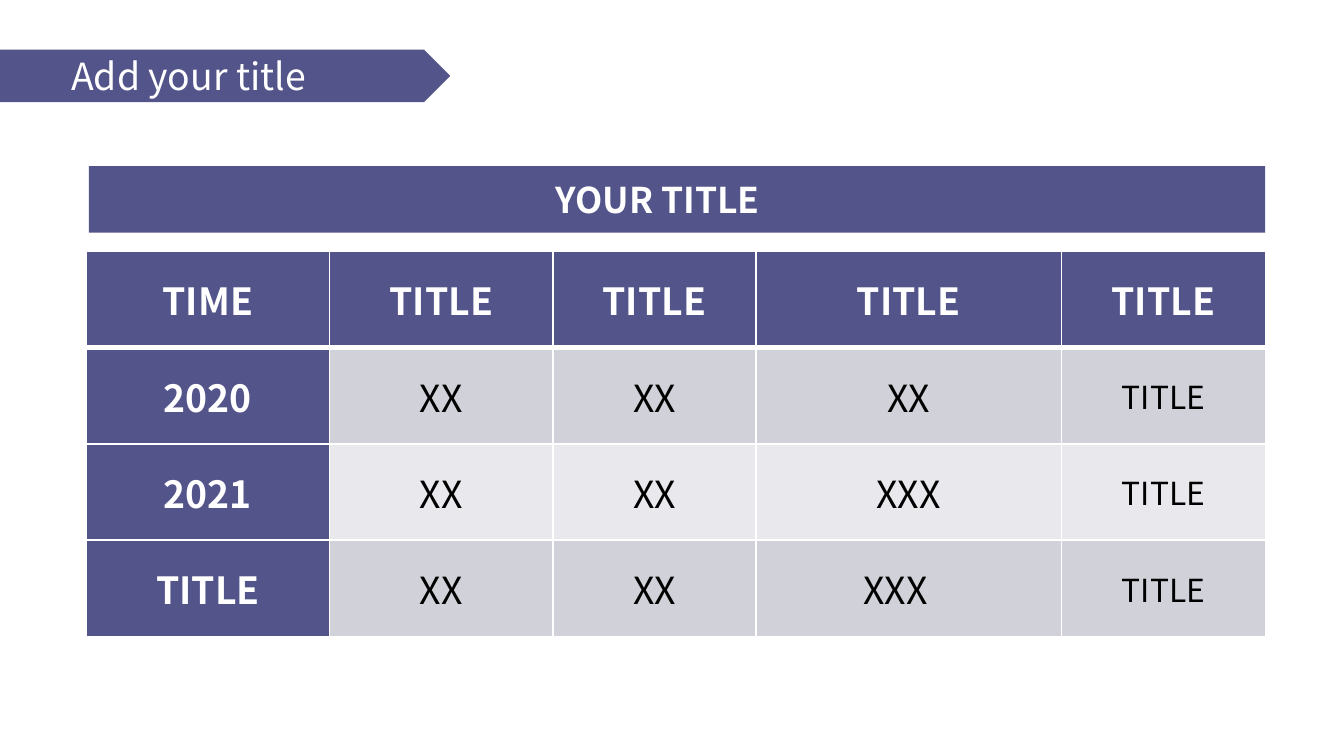
from dataclasses import dataclass

from lxml.etree import SubElement
from pptx import Presentation
from pptx.dml.color import RGBColor
from pptx.enum.shapes import MSO_SHAPE as Shape
from pptx.enum.text import MSO_ANCHOR as Anchor, MSO_AUTO_SIZE as AutoSize, PP_ALIGN as Align
from pptx.oxml.ns import qn
from pptx.util import Cm, Pt


@dataclass(frozen=True)
class Theme:
    font: str = "Noto Sans CJK JP"
    accent: str = "53548A"
    band_dark: str = "D1D1DA"
    band_light: str = "E9E9ED"
    white: str = "FFFFFF"
    black: str = "000000"
    title_size: float = 20
    heading_size: float = 19
    cell_size: float = 20
    note_size: float = 17
    rule: float = 1
    header_rule: float = 3


@dataclass(frozen=True)
class Box:
    left: float
    top: float
    width: float
    height: float

    def lengths(self) -> tuple:
        return Cm(self.left), Cm(self.top), Cm(self.width), Cm(self.height)


@dataclass(frozen=True)
class TextStyle:
    size: float
    color: str
    bold: bool = False
    align: Align = Align.CENTER


THEME = Theme()
HEADER = TextStyle(THEME.cell_size, THEME.white, bold=True)
BODY = TextStyle(THEME.cell_size, THEME.black)
NOTE = TextStyle(THEME.note_size, THEME.black)

TABLE_BOX = Box(1.63, 4.75, 22.29, 7.28)
COL_WIDTHS = [4.6, 4.22, 3.84, 5.77, 3.86]
ROWS = [
    ["TIME", "TITLE", "TITLE", "TITLE", "TITLE"],
    ["2020", "XX", "XX", "XX", "TITLE"],
    ["2021", "XX", "XX", "XXX", "TITLE"],
    ["TITLE", "XX", "XX", "XXX", "TITLE"],
]
CELL_INSET = 0.18
SHIFTED_CELL = (3, 3)  # its text sits a little left of centre
SHIFTED_INSET = 0.68


def set_text(tf, text: str, style: TextStyle) -> None:
    p = tf.paragraphs[0]
    p.text = text
    p.alignment = style.align
    p.font.name = THEME.font
    p.font.size = Pt(style.size)
    p.font.bold = style.bold
    p.font.color.rgb = RGBColor.from_string(style.color)


def add_block(shapes, kind: Shape, box: Box):
    sp = shapes.add_shape(kind, *box.lengths())
    sp.shadow.inherit = False
    sp.fill.solid()
    sp.fill.fore_color.rgb = RGBColor.from_string(THEME.accent)
    sp.line.fill.background()
    return sp


def set_borders(cell, top: float, bottom: float) -> None:
    """Border lines come before the fill in the cell properties."""
    tc_pr = cell._tc.get_or_add_tcPr()
    widths = {"a:lnL": THEME.rule, "a:lnR": THEME.rule, "a:lnT": top, "a:lnB": bottom}
    for i, (tag, width) in enumerate(widths.items()):
        ln = SubElement(tc_pr, qn(tag), w=str(Pt(width)))
        fill = SubElement(ln, qn("a:solidFill"))
        SubElement(fill, qn("a:srgbClr"), val=THEME.white)
        tc_pr.insert(i, ln)


def cell_look(row: int, col: int) -> tuple[str, TextStyle]:
    if row == 0 or col == 0:
        return THEME.accent, HEADER
    band = THEME.band_dark if row % 2 else THEME.band_light
    return band, NOTE if col == len(COL_WIDTHS) - 1 else BODY


def add_title(s) -> None:
    banner = add_block(s.shapes, Shape.PENTAGON, Box(0, 0.94, 8.51, 0.99))
    title = s.shapes.title
    title.element.addprevious(banner.element)  # banner lies behind the title
    title.left, title.top, title.width, title.height = Box(1.09, 0.84, 6.86, 1.19).lengths()
    tf = title.text_frame
    tf.word_wrap = True
    tf.auto_size = AutoSize.NONE
    tf.vertical_anchor = Anchor.MIDDLE
    set_text(tf, "Add your title", TextStyle(THEME.title_size, THEME.white, align=Align.LEFT))


def add_heading(s) -> None:
    group = s.shapes.add_group_shape()
    add_block(group.shapes, Shape.RECTANGLE, Box(1.68, 3.14, 22.23, 1.26))
    label = group.shapes.add_textbox(*Box(8.99, 3.25, 6.88, 1.07).lengths())
    tf = label.text_frame
    tf.word_wrap = True
    set_text(tf, "YOUR TITLE", TextStyle(THEME.heading_size, THEME.white, bold=True))


def add_data_table(s) -> None:
    frame = s.shapes.add_table(len(ROWS), len(COL_WIDTHS), *TABLE_BOX.lengths())
    table = frame.table
    table.first_row = table.horz_banding = False
    for column, width in zip(table.columns, COL_WIDTHS):
        column.width = Cm(width)
    for r, texts in enumerate(ROWS):
        table.rows[r].height = Cm(TABLE_BOX.height / len(ROWS))
        for c, text in enumerate(texts):
            cell = table.cell(r, c)
            fill, style = cell_look(r, c)
            cell.fill.solid()
            cell.fill.fore_color.rgb = RGBColor.from_string(fill)
            cell.vertical_anchor = Anchor.MIDDLE
            cell.margin_top = cell.margin_bottom = 0
            cell.margin_left = Cm(CELL_INSET)
            cell.margin_right = Cm(SHIFTED_INSET if (r, c) == SHIFTED_CELL else CELL_INSET)
            set_text(cell.text_frame, text, style)
            set_borders(
                cell,
                top=THEME.header_rule if r == 1 else THEME.rule,
                bottom=THEME.header_rule if r == 0 else THEME.rule,
            )


def main() -> None:
    prs = Presentation()
    prs.slide_width, prs.slide_height = Cm(25.4), Cm(14.29)
    s = prs.slides.add_slide(prs.slide_layouts[5])

    # Title on its arrow banner
    add_title(s)
    # Heading bar above the table
    add_heading(s)
    # Table with header row, header column and banded rows
    add_data_table(s)

    prs.save("out.pptx")


if __name__ == "__main__":
    main()
